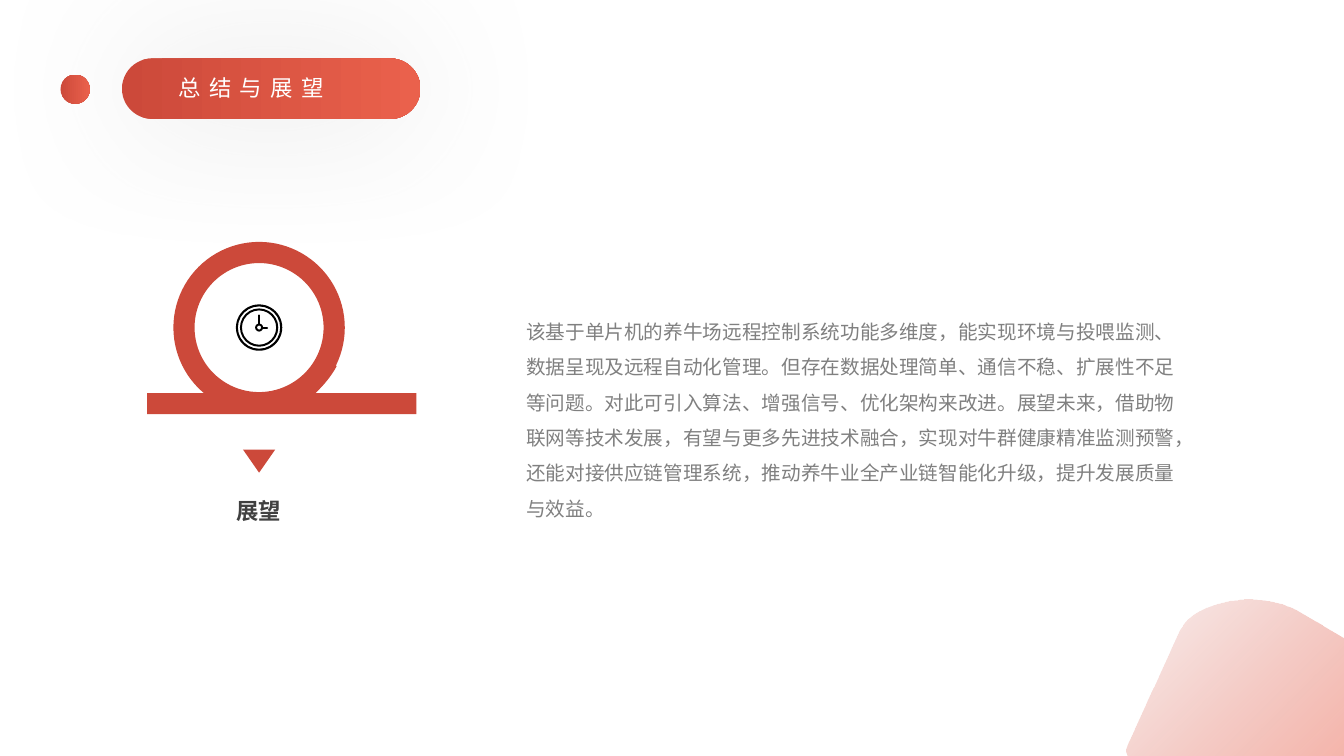
from lxml.etree import SubElement
from pptx import Presentation
from pptx.dml.color import RGBColor
from pptx.enum.shapes import MSO_CONNECTOR, MSO_SHAPE
from pptx.enum.text import PP_ALIGN
from pptx.oxml.ns import qn
from pptx.util import Inches, Pt

COLORS = {"red": "CC493A", "coral": "EA614C", "black": "000000", "white": "FFFFFF",
          "dark": "404040", "gray": "808080", "shade": "BFBFBF"}
rgb = {name: RGBColor.from_string(code) for name, code in COLORS.items()}

deck = Presentation()
deck.slide_width, deck.slide_height = Inches(13.33), Inches(7.5)
slide = deck.slides.add_slide(deck.slide_layouts[6])
shapes = slide.shapes


def paint(shape, color, angle=None, alphas=()):
    """Fill with one colour, or with red to coral when an angle is given."""
    shape.shadow.inherit = False
    shape.line.fill.background()
    if angle is None:
        shape.fill.solid()
        shape.fill.fore_color.rgb = rgb[color]
        return
    shape.fill.gradient()
    shape.fill.gradient_angle = angle
    for stop, name in zip(shape.fill.gradient_stops, ("red", "coral")):
        stop.color.rgb = rgb[name]
    tags = shape.fill._xPr.iter(qn("a:srgbClr"))
    for tag, alpha in zip(tags, alphas):
        SubElement(tag, qn("a:alpha"), val=str(alpha * 1000))


def write(box, text, size, color):
    """Add a text box and return its frame and paragraph."""
    frame = shapes.add_textbox(*map(Inches, box)).text_frame
    frame.word_wrap = True
    para = frame.paragraphs[0]
    para.text = text
    para.font.name, para.font.size = "Arial", Pt(size)
    para.font.color.rgb = rgb[color]
    return frame, para


# Ring on a bar, with a pointer below
bar = shapes.add_shape(MSO_SHAPE.RECTANGLE, Inches(1.46), Inches(3.9), Inches(2.67), Inches(0.21))
paint(bar, "red")
point = shapes.add_shape(MSO_SHAPE.FLOWCHART_MERGE, Inches(2.41), Inches(4.46),
                         Inches(0.32), Inches(0.23))
paint(point, "red")

# Concentric rings: big ring, clock rim, dial, hub
mid_x, mid_y = 2.57, 3.25
for radius, band, color in [(0.85, 0.21, "red"), (0.23, 0.02, "black"),
                            (0.19, 0.02, "black"), (0.04, 0.02, "black")]:
    ring = shapes.add_shape(MSO_SHAPE.DONUT, Inches(mid_x - radius), Inches(mid_y - radius),
                            Inches(2 * radius), Inches(2 * radius))
    ring.adjustments[0] = band / (2 * radius)
    paint(ring, color)

# Clock hands
for x, y, end_x, end_y in [(mid_x, 3.21, mid_x, 3.13), (2.61, mid_y, 2.65, mid_y)]:
    hand = shapes.add_connector(MSO_CONNECTOR.STRAIGHT, Inches(x), Inches(y),
                                Inches(end_x), Inches(end_y))
    hand.line.color.rgb = rgb["black"]
    hand.line.width = Pt(1.5)
    hand.line._ln.set("cap", "rnd")
    SubElement(hand._element.spPr, qn("a:effectLst"))

frame, label = write((1.97, 4.88, 1.19, 0.37), "展望", 16, "dark")
label.font.bold = True
label.alignment = PP_ALIGN.CENTER

# Title pill and dot
pill = shapes.add_shape(MSO_SHAPE.ROUNDED_RECTANGLE, Inches(1.21), Inches(0.58),
                        Inches(2.96), Inches(0.6))
pill.adjustments[0] = 0.5
paint(pill, "red", 0)
glow = SubElement(pill._element.spPr.find(qn("a:effectLst")), qn("a:outerShdw"),
                  blurRad=str(Pt(100)), dist="0", dir="0", algn="ctr", rotWithShape="0")
tint = SubElement(glow, qn("a:srgbClr"), val=COLORS["shade"])
SubElement(tint, qn("a:alpha"), val="40000")
dot = shapes.add_shape(MSO_SHAPE.OVAL, Inches(0.6), Inches(0.74), Inches(0.29), Inches(0.29))
paint(dot, "red", 0)

frame, title = write((1.66, 0.69, 1.76, 0.38), "总结与展望", 16, "white")
frame.word_wrap = False
frame.margin_left = frame.margin_right = Inches(0.11)
title.runs[0].font._element.set("spc", "600")

# Curved outlines: two numbers make a corner, six make a curve
fillet = [(3.34, 3.63), (3.1, 3.63), (3.07, 3.66),
          (2.96, 3.8, 2.78, 3.89, 2.59, 3.9), (3.13, 3.9),
          (3.21, 3.82, 3.29, 3.73, 3.34, 3.63)]
foot = [(2.03, 3.9), (1.46, 3.9), (1.46, 4.1), (2.56, 4.1),
        (2.36, 4.1, 2.18, 4.02, 2.03, 3.9)]
blob = [(11.18, 7.5), (13.33, 7.5), (13.33, 6.33), (12.87, 6.06),
        (12.7, 5.96, 12.44, 5.92, 12.2, 5.96),
        (11.97, 6, 11.78, 6.1, 11.71, 6.24), (11.2, 7.35),
        (11.18, 7.39, 11.17, 7.42, 11.17, 7.46)]
steps = 16
for outline, angle, alphas in [(fillet, None, ()), (foot, None, ()), (blob, 315, (9, 47))]:
    edge = []
    for part in outline:
        if len(part) == 2:
            edge.append(part)
            continue
        knots = [edge[-1], part[:2], part[2:4], part[4:]]
        for step in range(1, steps + 1):
            t = step / steps
            pulls = ((1 - t) ** 3, 3 * t * (1 - t) ** 2, 3 * t * t * (1 - t), t ** 3)
            edge.append(tuple(sum(pull * knot[axis] for pull, knot in zip(pulls, knots))
                              for axis in (0, 1)))
    edge = [(Inches(x), Inches(y)) for x, y in edge]
    build = shapes.build_freeform(*edge[0])
    build.add_line_segments(edge[1:], close=True)
    paint(build.convert_to_shape(), "red", angle, alphas)

frame, body = write(
    (5.12, 3.01, 6.69, 2.22),
    "该基于单片机的养牛场远程控制系统功能多维度，能实现环境与投喂监测、数据呈现及远程自动化管理。"
    "但存在数据处理简单、通信不稳、扩展性不足等问题。对此可引入算法、增强信号、优化架构来改进。"
    "展望未来，借助物联网等技术发展，有望与更多先进技术融合，实现对牛群健康精准监测预警，"
    "还能对接供应链管理系统，推动养牛业全产业链智能化升级，提升发展质量与效益。",
    14, "gray")
body.line_spacing = 1.5

deck.save("out.pptx")
